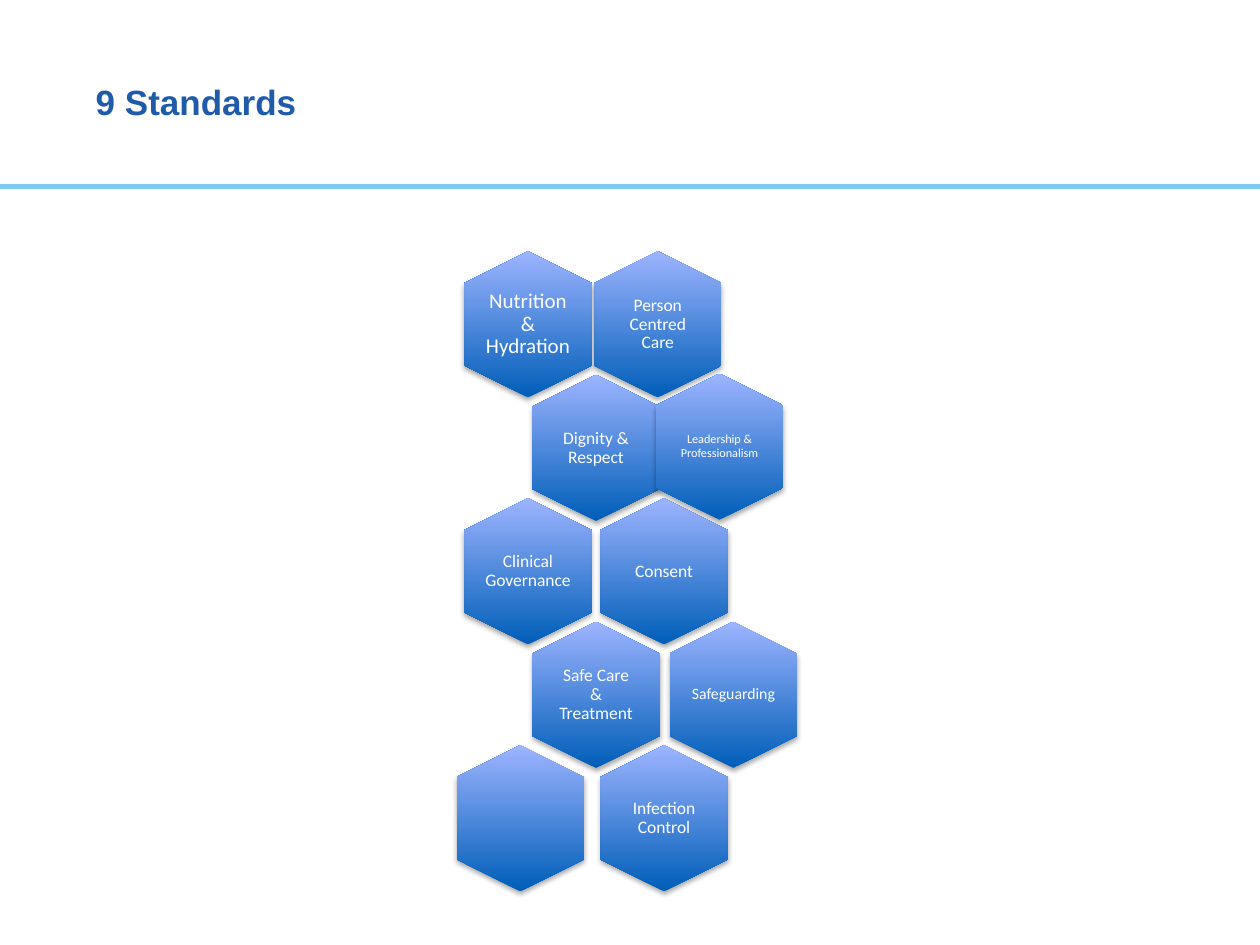
from lxml import etree
from pptx import Presentation
from pptx import util as u
from pptx.dml.color import RGBColor
from pptx.enum import shapes, text
from pptx.oxml import ns, parse_xml

# Colours, fonts and type sizes
THEME = {
    "head": {"name": "Arial", "size": u.Pt(20), "bold": True},
    "head_ink": "1F5BAA",
    "cell": {"name": "Calibri", "bold": False},
    "cell_ink": "FFFFFF",
    "rule": "7ECBF1",
    "dark": "005EB8",
    "light": "9DB4FF",
}
HEX_W, HEX_H = 1.16, 1.01
BOX_W, BOX_H = 0.69, 0.8
ROW_TOP, ROW_STEP = 2.07, 0.98

# Row, left, label, type size, text inset, upward nudge
CELLS = [
    (0, 4.64, "Person Centred Care", 10, 0.04, 0),
    (0, 3.61, "Nutrition & Hydration", 12, 0, 0),
    (1, 4.15, "Dignity & Respect", 10, 0.04, 0),
    (1, 5.13, "Leadership & Professionalism", 7, 0, 0.01),
    (2, 4.69, "Consent", 10, 0.04, 0),
    (2, 3.61, "Clinical Governance", 10, 0, 0),
    (3, 4.15, "Safe Care & Treatment", 10, 0.04, 0),
    (3, 5.24, "Safeguarding", 9, 0, 0),
    (4, 4.69, "Infection Control", 10, 0.04, 0),
    (4, 3.55, "", 10, 0, 0),
]

SHADOW = (
    f'<a:effectLst {ns.nsdecls("a")}>'
    f'<a:outerShdw blurRad="{u.Pt(3.1)}" dist="{u.Pt(1.8)}" dir="5400000" rotWithShape="0">'
    '<a:srgbClr val="000000"><a:alpha val="35000"/></a:srgbClr>'
    '</a:outerShdw></a:effectLst>'
)


def put(obj, vals):
    for key, val in vals.items():
        setattr(obj, key, val)


def rgb(code):
    return RGBColor.from_string(code)


def place(left, top, width, height):
    return [u.Inches(v) for v in (left, top, width, height)]


class Deck:
    def __init__(self, theme):
        self.theme = theme
        self.prs = Presentation()
        put(self.prs, {"slide_width": u.Inches(10), "slide_height": u.Inches(7.5)})
        self.slide = self.prs.slides.add_slide(self.prs.slide_layouts[5])
        self.group = None

    def style(self, para, kind, **more):
        put(para.font, {**self.theme[kind], **more})
        para.font.color.rgb = rgb(self.theme[kind + "_ink"])

    def title(self, words, *box):
        head = self.slide.shapes.title
        put(head, dict(zip(("left", "top", "width", "height"), place(*box))))
        frame = head.text_frame
        frame.text = words
        put(frame, {"vertical_anchor": text.MSO_ANCHOR.TOP, "word_wrap": True})
        para = frame.paragraphs[0]
        para.alignment = text.PP_ALIGN.LEFT
        self.style(para, "head")

    def rule(self, top):
        line = self.slide.shapes.add_connector(
            shapes.MSO_CONNECTOR.STRAIGHT, *place(0, top, 10, top))
        line.line.color.rgb = rgb(self.theme["rule"])
        line.line.width = u.Pt(3)
        etree.SubElement(line._element.spPr, ns.qn("a:effectLst"))

    def hexagon(self, left, top):
        cell = self.group.shapes.add_shape(
            shapes.MSO_SHAPE.HEXAGON, *place(left, top, HEX_W, HEX_H))
        cell.rotation = 90
        cell.adjustments[0] = 0.25
        cell.line.fill.background()
        # The gradient stays upright while the shape is turned
        fill = cell.fill
        fill.gradient()
        fill.gradient_angle = 90
        for stop, tone in zip(fill.gradient_stops, ("dark", "light")):
            stop.color.rgb = rgb(self.theme[tone])
        props = cell._element.spPr
        props.find(ns.qn("a:gradFill")).set("rotWithShape", "0")
        props.append(parse_xml(SHADOW))

    def label(self, words, left, top, size, inset):
        box = self.group.shapes.add_textbox(*place(left, top, BOX_W, BOX_H))
        frame = box.text_frame
        sides = ("left", "top", "right", "bottom")
        put(frame, {f"margin_{side}": u.Inches(inset) for side in sides})
        put(frame, {"word_wrap": True, "vertical_anchor": text.MSO_ANCHOR.MIDDLE})
        frame.text = words
        para = frame.paragraphs[0]
        put(para, {"alignment": text.PP_ALIGN.CENTER, "line_spacing": 0.9})
        self.style(para, "cell", size=u.Pt(size))

    def comb(self, cells):
        self.group = self.slide.shapes.add_group_shape()
        for row, left, words, size, inset, lift in cells:
            top = ROW_TOP + row * ROW_STEP - lift
            self.hexagon(left, top)
            if words:
                self.label(words, left + (HEX_W - BOX_W) / 2,
                           top + (HEX_H - BOX_H) / 2, size, inset)


def main():
    deck = Deck(THEME)
    # Heading and rule
    deck.rule(1.48)
    deck.title("9 Standards", 0.66, 0.59, 7.08, 0.71)
    # Honeycomb of standards
    deck.comb(CELLS)
    deck.prs.save("out.pptx")


if __name__ == "__main__":
    main()
